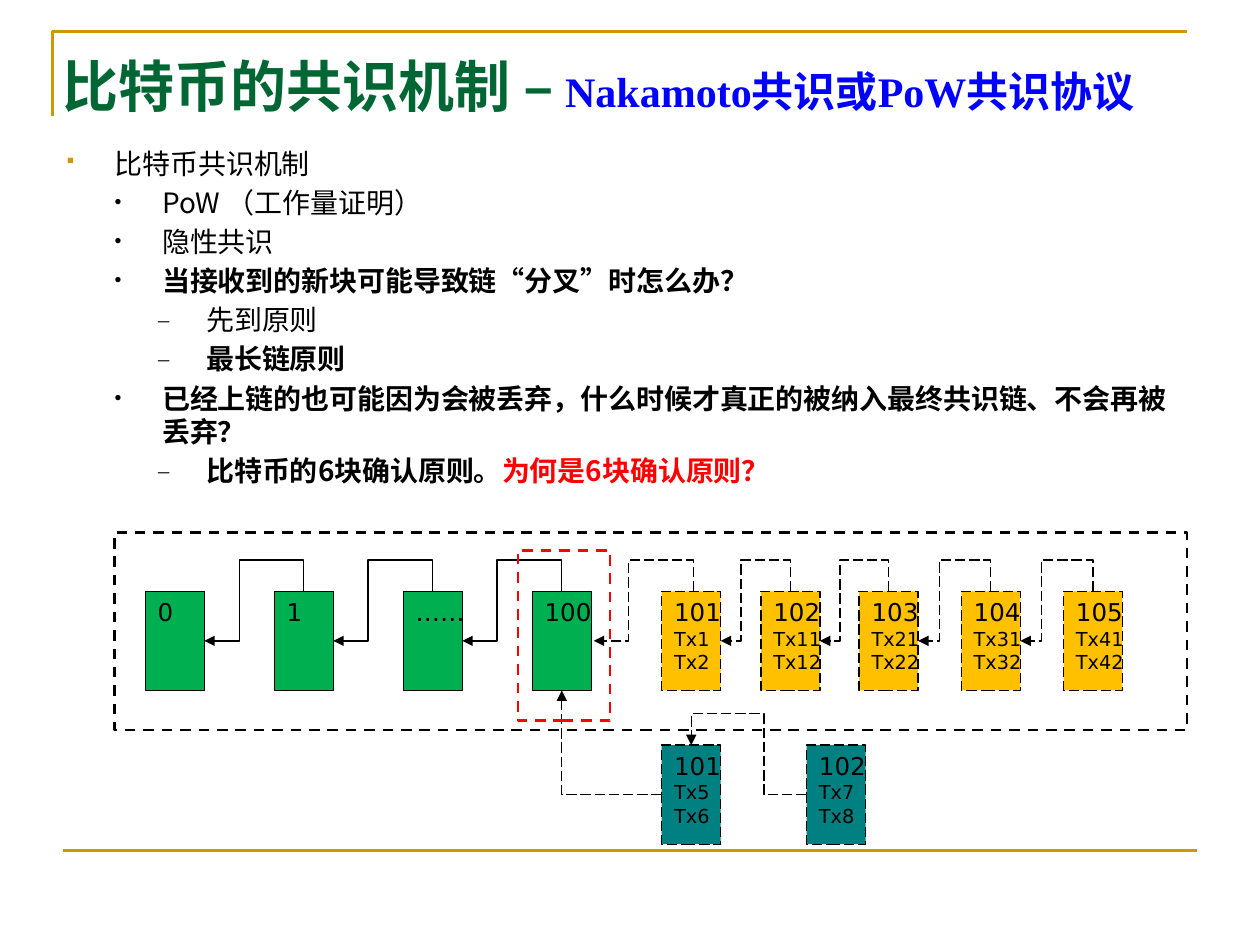
from lxml import etree
from pptx import Presentation
from pptx.dml.color import RGBColor
from pptx.enum.dml import MSO_LINE
from pptx.enum.shapes import MSO_CONNECTOR, MSO_SHAPE
from pptx.enum.text import MSO_ANCHOR, MSO_AUTO_SIZE, PP_ALIGN
from pptx.oxml.ns import qn
from pptx.util import Cm, Pt

RECT = MSO_SHAPE.RECTANGLE
ELBOW, STRAIGHT = MSO_CONNECTOR.ELBOW, MSO_CONNECTOR.STRAIGHT
DASH, LONG = MSO_LINE.DASH, MSO_LINE.LONG_DASH
TOP, BOTTOM = MSO_ANCHOR.TOP, MSO_ANCHOR.BOTTOM
LEFT, FIXED = PP_ALIGN.LEFT, MSO_AUTO_SIZE.NONE

GOLD, GREEN, AMBER, TEAL = "CC9900", "00B050", "FFC000", "008080"
BLACK, RED = "000000", "FF0000"
HAN, SERIF, SANS = "Noto Sans CJK SC", "Times New Roman", "DejaVu Sans"
WIDE, TALL = 1.19, 2.0  # size of a block
RISE = 0.63  # height of an arrow above its block

# Bullet by level: sign, font, size in percent, left indent
MARKS = [("§", "Wingdings", 65, 0.97), ("•", SERIF, 80, 1.93), ("–", SERIF, 80, 2.82)]
POINTS = [
    (0, [("比特币共识机制", {})]),
    (1, [("PoW （工作量证明）", {})]),
    (1, [("隐性共识", {})]),
    (1, [("当接收到的新块可能导致链“分叉”时怎么办？", {"bold": True})]),
    (2, [("先到原则", {})]),
    (2, [("最长链原则", {"bold": True})]),
    (1, [("已经上链的也可能因为会被丢弃，什么时候才真正的被纳入最终共识链、不会再被丢弃？",
          {"bold": True})]),
    (2, [("比特币的6块确认原则。", {"bold": True}),
         ("为何是6块确认原则？", {"bold": True, "color": RED})]),
]


def paint(code):
    return RGBColor.from_string(code)


def add(node, tag, **attrs):
    return etree.SubElement(node, qn(tag), {k: str(v) for k, v in attrs.items()})


def write(para, text, size=16, font=HAN, color=BLACK, bold=False):
    run = para.add_run()
    run.text = text
    run.font.size, run.font.bold, run.font.name = Pt(size), bold, font
    run.font.color.rgb = paint(color)
    add(run.font._element, "a:ea", typeface=HAN)


def stroke(line, color=BLACK, width=0.75, dash=None):
    line.color.rgb = paint(color)
    line.width = Pt(width)
    if dash:
        line.dash_style = dash


def frame(slide, box, fill=None, **look):
    shape = slide.shapes.add_shape(RECT, *map(Cm, box))
    shape.shadow.inherit = False
    if fill:
        shape.fill.solid()
        shape.fill.fore_color.rgb = paint(fill)
    else:
        shape.fill.background()
    stroke(shape.line, **look)
    return shape


def block(slide, left, top, fill, lines, dash=None):
    shape = frame(slide, (left, top, WIDE, TALL), fill, dash=dash)
    text = shape.text_frame
    text.word_wrap = False
    text.vertical_anchor = TOP
    for i, line in enumerate(lines):
        para = text.add_paragraph() if i else text.paragraphs[0]
        para.alignment = LEFT
        write(para, line, size=11 if i else 14, font=SANS)


def rule(slide, start, end, kind=STRAIGHT, **look):
    link = slide.shapes.add_connector(kind, *map(Cm, start + end))
    stroke(link.line, **look)
    add(link._element.spPr, "a:effectLst")
    return link


def bend(slide, start, end, preset, bends=(), turned=False, dash=None):
    """Elbow arrow up and to the left; turned ones leave vertically."""
    link = rule(slide, start, end, ELBOW, dash=dash)
    add(link.line._ln, "a:tailEnd", type="triangle")
    wide, high = abs(start[0] - end[0]), abs(start[1] - end[1])
    midx, midy = (start[0] + end[0]) / 2, (start[1] + end[1]) / 2
    if turned:
        wide, high = high, wide
    link.left, link.top = Cm(midx - wide / 2), Cm(midy - high / 2)
    link.width, link.height = Cm(wide), Cm(high)
    form = link._element.spPr.find(qn("a:xfrm"))
    form.set("rot", str((270 if turned else 180) * 60000))
    for flip in ("flipH", "flipV"):
        form.set(flip, "1" if turned else "0")
    shape = link._element.spPr.find(qn("a:prstGeom"))
    shape.set("prst", preset)
    guides = shape.find(qn("a:avLst"))
    for i, part in enumerate(bends, 1):
        add(guides, "a:gd", name=f"adj{i}", fmla=f"val {round(part * 100000)}")


def trim(slide):
    # Corner line above the title and rule at the foot
    pen = slide.shapes.build_freeform(Cm(1.06), Cm(2.33), scale=1.0)
    pen.add_line_segments([(Cm(1.06), Cm(0.63)), (Cm(23.92), Cm(0.63))], close=False)
    edge = pen.convert_to_shape()
    edge.shadow.inherit = False
    edge.fill.background()
    stroke(edge.line, GOLD, 1.5)
    rule(slide, (1.27, 17.15), (24.13, 17.15), color=GOLD, width=1.5)


def head(slide, box):
    title = slide.shapes.title
    title.left, title.top, title.width, title.height = map(Cm, box)
    text = title.text_frame
    text.auto_size = FIXED
    text.vertical_anchor = BOTTOM
    para = text.paragraphs[0]
    para.alignment = LEFT
    write(para, "比特币的共识机制 –", 32, SERIF, "006633", True)
    write(para, " ", 28, SERIF, "006633", True)
    write(para, "Nakamoto共识或PoW共识协议", 24, SERIF, "0000FF", True)


def body(slide, box):
    text = slide.shapes.add_textbox(*map(Cm, box)).text_frame
    text.word_wrap = True
    for i, (level, runs) in enumerate(POINTS):
        para = text.add_paragraph() if i else text.paragraphs[0]
        para.level = level
        para.space_before = Pt(3.2)
        for words, look in runs:
            write(para, words, **look)
        sign, font, size, left = MARKS[level]
        props = para._p.get_or_add_pPr()
        props.set("marL", str(Cm(left)))
        props.set("indent", str(-Cm(0.97)))
        add(add(props, "a:buClr"), "a:srgbClr", val=BLACK if level else GOLD)
        add(props, "a:buSzPct", val=size * 1000)
        add(props, "a:buFont", typeface=font)
        add(props, "a:buChar", char=sign)


def chain(slide, box):
    left, top = box[:2]
    row = top + 1.19
    settled = ["0", "1", "……", "100"]
    # Settled blocks at equal steps, then open blocks set closer together
    spots = [left + 0.62 + 2.6 * i for i in range(4)]
    spots += [left + gap for gap in (11.03, 13.03, 15.01, 17.07, 19.13)]
    for i, spot in enumerate(spots):
        if i < 4:
            block(slide, spot, row, GREEN, [settled[i]])
        else:
            tens = i - 4 or ""
            lines = [str(97 + i), f"Tx{tens}1", f"Tx{tens}2"]
            block(slide, spot, row, AMBER, lines, LONG)
        if i:
            slip = 0.05 if i == 4 else 0
            bend(slide, (spot + WIDE / 2 + slip, row),
                 (spots[i - 1] + WIDE + slip, row + TALL / 2),
                 "bentConnector4", (-RISE / (TALL / 2), 0.65 if i < 5 else 0.71),
                 turned=True, dash=None if i < 4 else LONG)
    frame(slide, box, width=1.5, dash=DASH)

    # Losing fork that grows from block 100
    low, one, two = top + 4.29, spots[4], spots[4] + 2.92
    block(slide, one, low, TEAL, ["101", "Tx5", "Tx6"], LONG)
    block(slide, two, low, TEAL, ["102", "Tx7", "Tx8"], LONG)
    mid = low + TALL / 2
    bend(slide, (one, mid), (spots[3] + WIDE / 2, row + TALL), "bentConnector2", dash=LONG)
    bend(slide, (two, mid), (one + WIDE / 2, low), "bentConnector4",
         (0.37, 1 + RISE / (TALL / 2)), dash=LONG)

    # Mark around block 100
    frame(slide, (spots[3] - 0.29, top + 0.37, 1.86, 3.43), color=RED, width=1.5, dash=DASH)


def main():
    deck = Presentation()
    deck.slide_width, deck.slide_height = Cm(25.4), Cm(19.05)
    slide = deck.slides.add_slide(deck.slide_layouts[5])
    trim(slide)
    head(slide, (1.0, 0.72, 23.27, 1.8))
    body(slide, (1.09, 2.82, 23.01, 7.6))
    chain(slide, (2.31, 10.73, 21.62, 3.99))
    deck.save("out.pptx")


if __name__ == "__main__":
    main()
